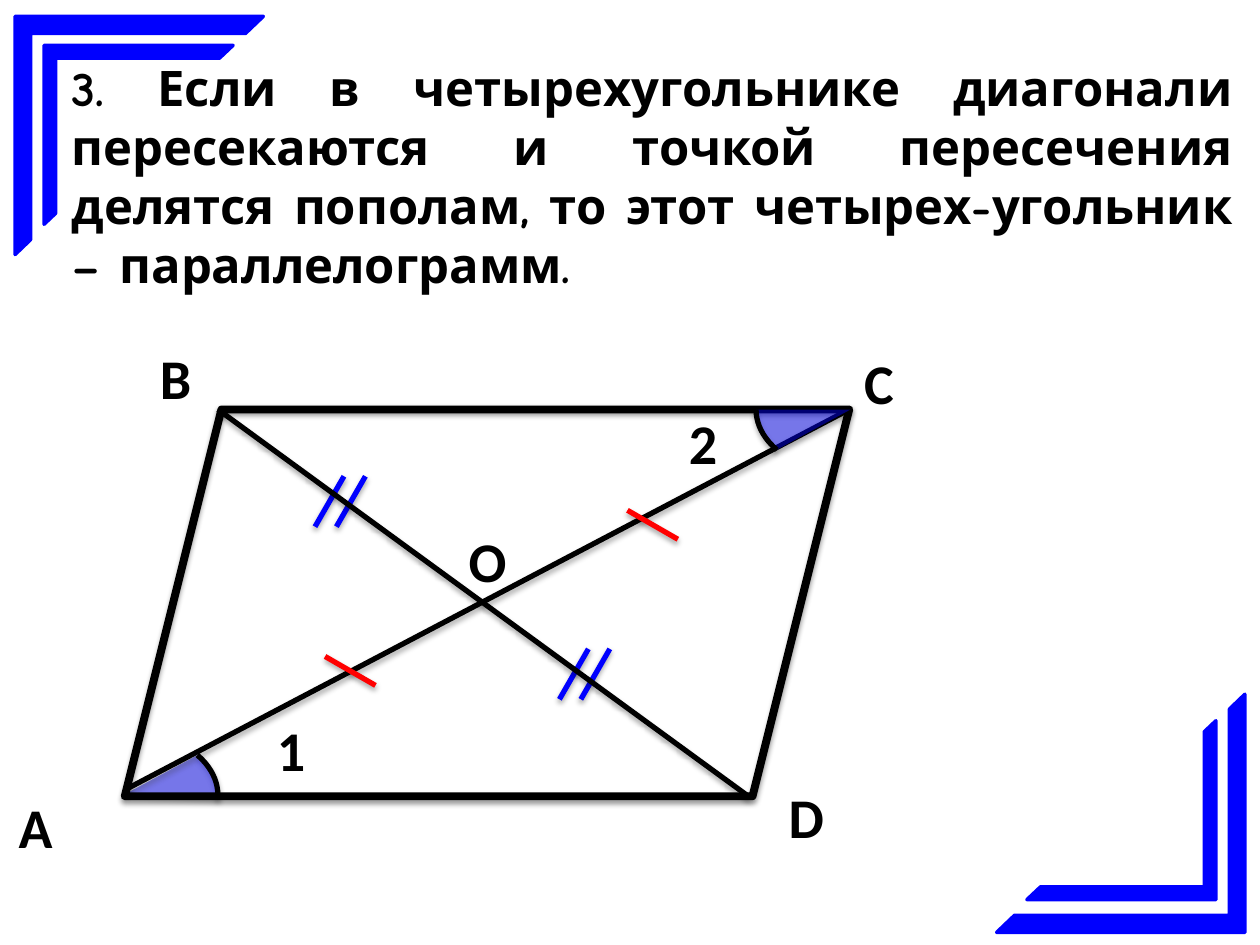
from pptx import Presentation
from pptx.dml.color import RGBColor
from pptx.enum.shapes import MSO_CONNECTOR, MSO_SHAPE
from pptx.enum.text import MSO_AUTO_SIZE, PP_ALIGN
from pptx.oxml import parse_xml
from pptx.oxml.ns import nsdecls, qn
from pptx.util import Inches, Pt

BLACK = RGBColor(0x00, 0x00, 0x00)
BLUE = RGBColor(0x00, 0x00, 0xFF)
RED = RGBColor(0xFF, 0x00, 0x00)
COLS, ROWS = 100, 75
THEOREM = ("3. Если в четырехугольнике диагонали пересекаются и точкой пересечения "
           "делятся пополам, то этот четырех-угольник – параллелограмм.")


class Sketch:
    """Draws styled elements on the current slide, measured in grid columns and rows."""

    def __init__(self, prs):
        self.w, self.h = prs.slide_width, prs.slide_height
        self.s = prs.slides.add_slide(prs.slide_layouts[6])

    def grid(self, *values):
        units = (self.w / COLS, self.h / ROWS)
        return [round(v * units[i % 2]) for i, v in enumerate(values)]

    def effect(self, sp, alpha=None, dist=1.8):
        shadow = "" if alpha is None else (
            f'<a:outerShdw blurRad="{Pt(3.1)}" dist="{Pt(dist)}" dir="5400000" rotWithShape="0">'
            f'<a:srgbClr val="{BLACK}"><a:alpha val="{alpha * 1000}"/></a:srgbClr></a:outerShdw>')
        sp._element.spPr.append(
            parse_xml(f'<a:effectLst {nsdecls("a")}>{shadow}</a:effectLst>'))

    def shape(self, kind, box, color, width, fill=None, adj=(), rot=0, shapes=None):
        sp = (shapes or self.s.shapes).add_shape(kind, *self.grid(*box))
        for i, value in enumerate(adj):
            sp.adjustments[i] = value
        sp.rotation = rot
        if fill is None:
            sp.fill.background()
        else:
            sp.fill.solid()
            sp.fill.fore_color.rgb = fill
        sp.line.color.rgb = color
        sp.line.width = Pt(width)
        return sp

    def corners(self, boxes):
        group = self.s.shapes.add_group_shape()
        for *box, rot in boxes:
            self.effect(self.shape(MSO_SHAPE.HALF_FRAME, box, BLUE, 2, BLUE,
                                   (0.072, 0.065), rot, group.shapes))

    def angle(self, x, y, start, end, rot=0):
        sp = self.shape(MSO_SHAPE.ARC, (x, y, 15, 10.2), BLACK, 3, BLUE, (start, end), rot)
        color = sp._element.spPr.find(qn("a:solidFill")).find(qn("a:srgbClr"))
        color.append(parse_xml(f'<a:alpha {nsdecls("a")} val="45000"/>'))
        self.effect(sp, 35)

    def parallelogram(self, *box):
        self.effect(self.shape(MSO_SHAPE.PARALLELOGRAM, box, BLACK, 4.5), 38, 1.6)

    def line(self, x1, y1, x2, y2, color=BLACK):
        c = self.s.shapes.add_connector(MSO_CONNECTOR.STRAIGHT, *self.grid(x1, y1, x2, y2))
        c.line.color.rgb = color
        c.line.width = Pt(3)
        self.effect(c, 35)

    def text(self, text, box, size=32, font="Calibri", wrap=False, align=None):
        tf = self.s.shapes.add_textbox(*self.grid(*box)).text_frame
        tf.word_wrap = wrap
        tf.auto_size = MSO_AUTO_SIZE.SHAPE_TO_FIT_TEXT
        p = tf.paragraphs[0]
        p.alignment = align
        r = p.add_run()
        r.text = text
        r.font.name, r.font.size, r.font.bold = font, Pt(size), True
        r.font.color.rgb = BLACK
        return r

    def theorem(self, text, box):
        r = self.text(text, box, 28, "Comic Neue", True, PP_ALIGN.JUSTIFY)
        r.font._element.insert(0, parse_xml(
            f'<a:ln {nsdecls("a")} w="{Pt(0.9)}"><a:solidFill>'
            f'<a:srgbClr val="{BLACK}"/></a:solidFill></a:ln>'))


def main():
    prs = Presentation()
    prs.slide_width, prs.slide_height = Inches(10), Inches(7.5)
    d = Sketch(prs)
    d.angle(2.3, 58, 199.005, 1.738)
    d.corners([(1.2, 1.3, 19.7, 18.9, 0), (3.5, 3.6, 15, 14.2, 0),
               (79.1, 55.1, 19.7, 18.9, 180), (81.5, 57.2, 15, 14.2, 180)])
    d.parallelogram(9.9, 32.5, 57.5, 30.7)
    d.line(9.9, 62.7, 67.4, 32.5)
    for label, x, y, w in [("А", 0.5, 62.4, 4.7), ("D", 61.6, 61.6, 4.8),
                           ("C", 67.6, 27.2, 4.4), ("B", 11.7, 26.8, 4.5),
                           ("1", 21, 56.3, 4.3), ("2", 53.7, 31.9, 4.3)]:
        d.text(label, (x, y, w, 6.4))
    d.theorem(THEOREM, (4.7, 4.1, 94.1, 29.3))
    for x, y in [(25.8, 52.1), (49.8, 40.5)]:
        d.line(x, y, x + 4, y + 2.3, RED)
    for x, y in [(44.4, 55.5), (25, 41.8)]:
        for left in (x, x + 1.7):
            d.line(left, y, left + 2.3, y - 4, BLUE)
    d.angle(60, 27.4, 198.827, 0, 180)
    d.line(17.3, 32.5, 59.4, 63.2)
    d.text("О", (36.2, 41.3, 5.1, 6.4))
    prs.save("out.pptx")


if __name__ == "__main__":
    main()
